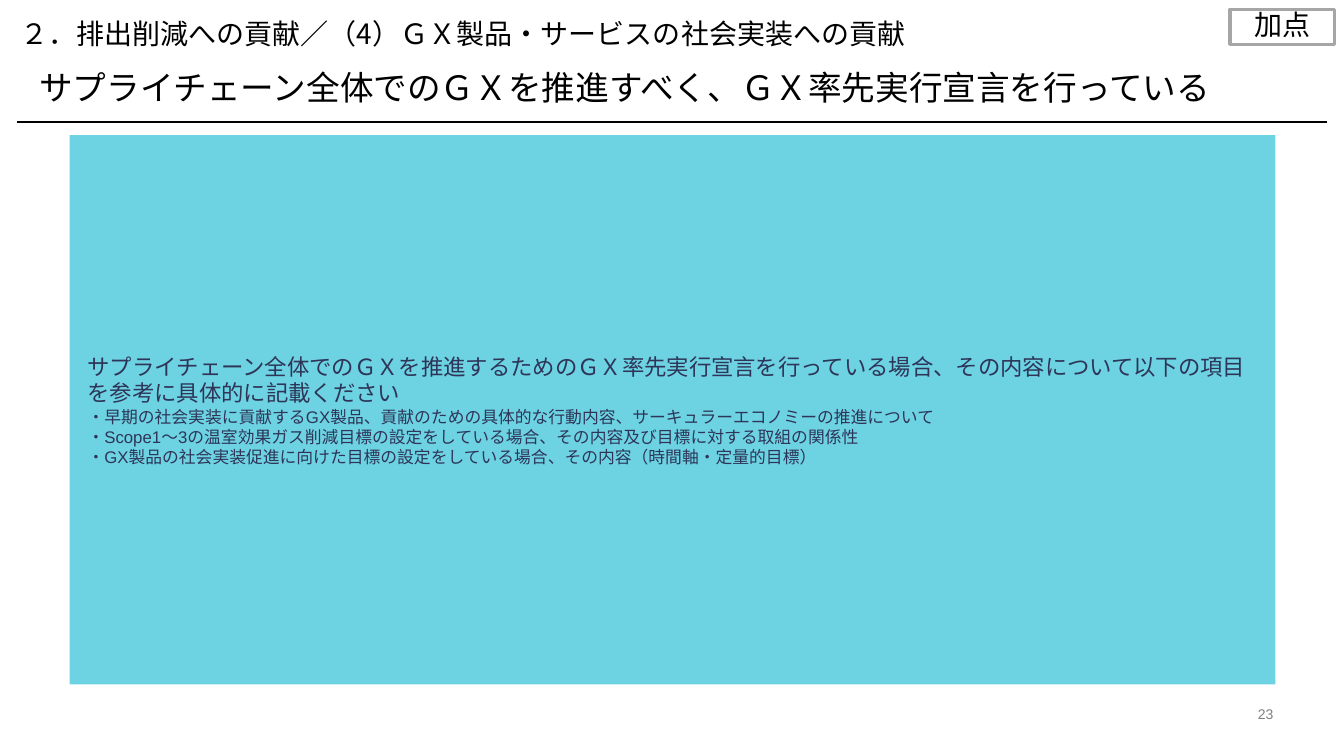
from dataclasses import dataclass

from lxml.etree import SubElement
from pptx import Presentation
from pptx.dml.color import RGBColor
from pptx.enum.shapes import MSO_CONNECTOR, MSO_SHAPE
from pptx.enum.text import MSO_ANCHOR, PP_ALIGN
from pptx.oxml.ns import qn
from pptx.shapes.base import BaseShape
from pptx.slide import Slide
from pptx.util import Inches, Pt


@dataclass(frozen=True)
class Theme:
    heading_font: str = "Noto Sans CJK JP"
    body_font: str = "Arial"
    black: str = "000000"
    body: str = "2E3558"
    panel: str = "30C1D7"
    panel_opacity: int = 70
    tag_border: str = "A6A6A6"
    page_number: str = "808080"
    title_size: int = 24
    section_size: int = 20
    lead_size: int = 16
    item_size: int = 12
    number_size: int = 10


THEME = Theme()


@dataclass(frozen=True)
class Line:
    text: str
    size: int
    font: str = THEME.heading_font
    color: str = THEME.black
    align: PP_ALIGN = PP_ALIGN.LEFT
    spacing: float = 0.9
    indent: float = 0


@dataclass(frozen=True)
class Box:
    left: float
    top: float
    width: float
    height: float
    lines: tuple[Line, ...]
    anchor: MSO_ANCHOR = MSO_ANCHOR.TOP
    margins: tuple[float, float] = (0, 0)  # horizontal, vertical

    def bounds(self) -> list[int]:
        return [Inches(v) for v in (self.left, self.top, self.width, self.height)]


def body_line(text: str, size: int) -> Line:
    return Line(text, size, THEME.body_font, THEME.body, spacing=1.0, indent=0.08)


LEAD = (
    "サプライチェーン全体でのＧＸを推進するためのＧＸ率先実行宣言を行っている場合、"
    "その内容について以下の項目を参考に具体的に記載ください"
)
ITEMS = (
    "・早期の社会実装に貢献するGX製品、貢献のための具体的な行動内容、サーキュラーエコノミーの推進について",
    "・Scope1～3の温室効果ガス削減目標の設定をしている場合、その内容及び目標に対する取組の関係性",
    "・GX製品の社会実装促進に向けた目標の設定をしている場合、その内容（時間軸・定量的目標）",
)

TEXT_BOXES = (
    Box(12.21, 7, 0.42, 0.17,
        (Line("23", THEME.number_size, THEME.body_font, THEME.page_number,
              PP_ALIGN.RIGHT, 1.0),),
        MSO_ANCHOR.BOTTOM),
    Box(0.2, 0.2, 11.96, 0.3,
        (Line("２．排出削減への貢献／（4）ＧＸ製品・サービスの社会実装への貢献",
              THEME.section_size),)),
    Box(0.39, 0.71, 12.3, 0.36,
        (Line("サプライチェーン全体でのＧＸを推進すべく、ＧＸ率先実行宣言を行っている",
              THEME.title_size),)),
)
PANEL = Box(0.69, 1.34, 11.96, 5.45,
            (body_line(LEAD, THEME.lead_size),
             *(body_line(item, THEME.item_size) for item in ITEMS)),
            MSO_ANCHOR.MIDDLE, (0.1, 0.05))
TAG = Box(12.2, 0.09, 1.04, 0.35,
          (Line("加点", THEME.section_size, align=PP_ALIGN.CENTER),),
          MSO_ANCHOR.MIDDLE)


def write_text(shape: BaseShape, box: Box) -> None:
    frame = shape.text_frame
    frame.word_wrap = True
    frame.vertical_anchor = box.anchor
    horizontal, vertical = box.margins
    frame.margin_left = frame.margin_right = Inches(horizontal)
    frame.margin_top = frame.margin_bottom = Inches(vertical)
    for index, line in enumerate(box.lines):
        paragraph = frame.add_paragraph() if index else frame.paragraphs[0]
        paragraph.alignment = line.align
        paragraph.line_spacing = line.spacing
        if line.indent:
            properties = paragraph._p.get_or_add_pPr()
            properties.set("marL", str(Inches(line.indent)))
            properties.set("indent", "0")
        run = paragraph.add_run()
        run.text = line.text
        run.font.size = Pt(line.size)
        run.font.color.rgb = RGBColor.from_string(line.color)
        run.font.name = line.font
        # Japanese characters take the East Asian typeface
        SubElement(run._r.get_or_add_rPr(), qn("a:ea"), typeface=line.font)


def add_text_box(slide: Slide, box: Box) -> None:
    write_text(slide.shapes.add_textbox(*box.bounds()), box)


def add_rectangle(slide: Slide, box: Box) -> BaseShape:
    shape = slide.shapes.add_shape(MSO_SHAPE.RECTANGLE, *box.bounds())
    shape.shadow.inherit = False
    write_text(shape, box)
    return shape


def add_panel(slide: Slide) -> None:
    shape = add_rectangle(slide, PANEL)
    shape.fill.solid()
    shape.fill.fore_color.rgb = RGBColor.from_string(THEME.panel)
    color = shape._element.spPr.find(qn("a:solidFill")).find(qn("a:srgbClr"))
    SubElement(color, qn("a:alpha"), val=str(THEME.panel_opacity * 1000))
    shape.line.fill.background()


def add_tag(slide: Slide) -> None:
    shape = add_rectangle(slide, TAG)
    shape.fill.background()
    shape.line.color.rgb = RGBColor.from_string(THEME.tag_border)
    shape.line.width = Pt(2.25)


def add_rule(slide: Slide) -> None:
    rule = slide.shapes.add_connector(
        MSO_CONNECTOR.STRAIGHT, Inches(0.17), Inches(1.21), Inches(13.16), Inches(1.21))
    rule.line.color.rgb = RGBColor.from_string(THEME.black)
    rule.line.width = Pt(1)
    SubElement(rule._element.spPr, qn("a:effectLst"))


def main() -> None:
    presentation = Presentation()
    presentation.slide_width = Inches(13.33)
    presentation.slide_height = Inches(7.5)
    slide = presentation.slides.add_slide(presentation.slide_layouts[6])

    # Page number, section heading and title
    for box in TEXT_BOXES:
        add_text_box(slide, box)
    # Rule under the title
    add_rule(slide)
    # Guidance panel and the tag in the corner
    add_panel(slide)
    add_tag(slide)

    presentation.save("out.pptx")


if __name__ == "__main__":
    main()
